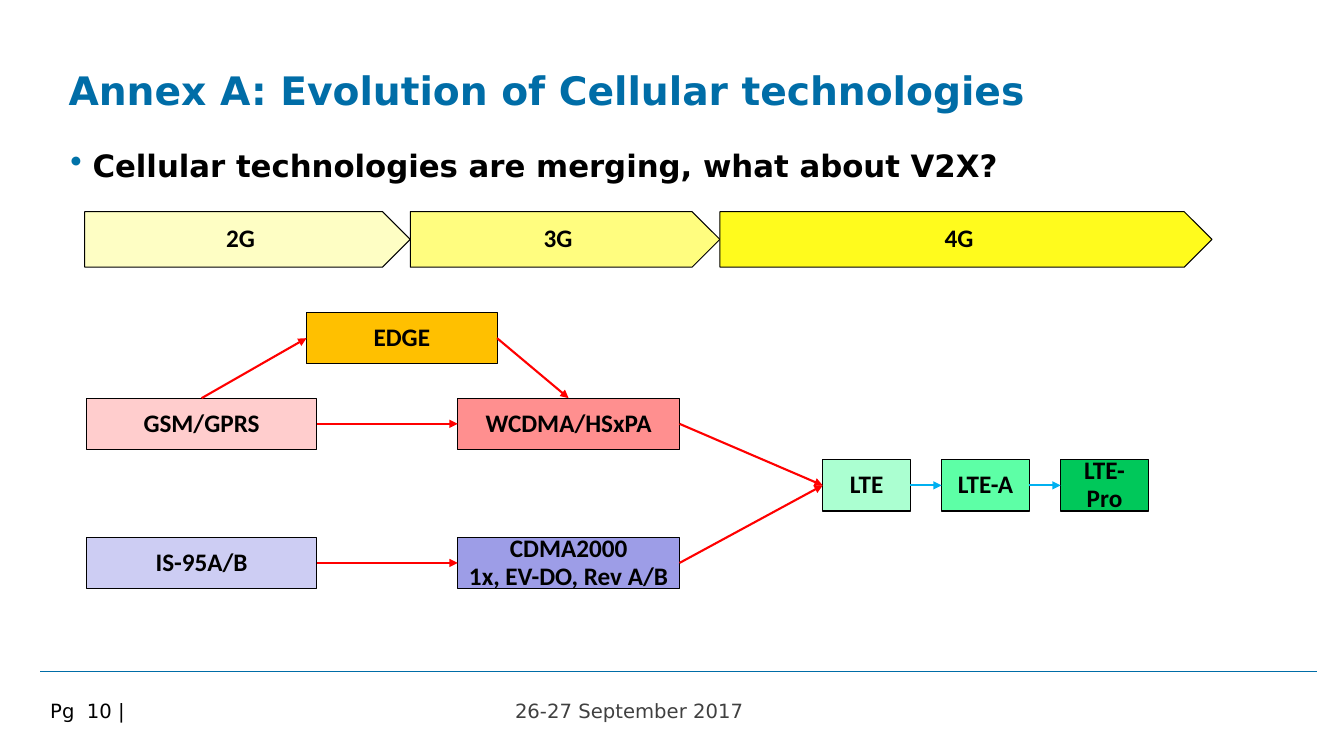
from lxml import etree
from pptx import Presentation
from pptx.dml.color import RGBColor
from pptx.enum.shapes import MSO_CONNECTOR, MSO_SHAPE
from pptx.enum.text import MSO_ANCHOR, PP_ALIGN
from pptx.oxml.ns import qn
from pptx.util import Inches, Pt

COLORS = {
    "title": "006DA7", "bullet": "0072A8", "black": "000000", "date": "404040",
    "red": "FF0000", "blue": "00B0F0",
    "2G": "FEFEC4", "3G": "FFFD7F", "4G": "FFFB1D",
    "EDGE": "FFC000", "GSM/GPRS": "FFCDCD", "WCDMA/HSxPA": "FF8F8F",
    "IS-95A/B": "CDCDF3", "CDMA2000\n1x, EV-DO, Rev A/B": "9D9DE7",
    "LTE": "ABFFD1", "LTE-A": "5DFFA6", "LTE-Pro": "00C85A",
}
CDMA = "CDMA2000\n1x, EV-DO, Rev A/B"

prs = Presentation()
prs.slide_width, prs.slide_height = Inches(13.33), Inches(7.5)
s = prs.slides.add_slide(prs.slide_layouts[5])


def write(sp, text, size, color, font="DejaVu Sans", bold=False, spacing=1.0,
          align=PP_ALIGN.LEFT, anchor=MSO_ANCHOR.TOP, insets=(0.1, 0.05, 0.1, 0.05)):
    tf = sp.text_frame
    tf.text = text
    tf.word_wrap = True
    tf.vertical_anchor = anchor
    tf.margin_left, tf.margin_top, tf.margin_right, tf.margin_bottom = map(Inches, insets)
    for p in tf.paragraphs:
        p.alignment, p.line_spacing = align, spacing
        for r in p.runs:
            r.font.name, r.font.size, r.font.bold = font, Pt(size), bold
            r.font.color.rgb = RGBColor.from_string(COLORS[color])


def add_line(x1, y1, x2, y2, color, width):
    line = s.shapes.add_connector(MSO_CONNECTOR.STRAIGHT, *map(Inches, (x1, y1, x2, y2)))
    line.line.color.rgb = RGBColor.from_string(COLORS[color])
    line.line.width = Pt(width)
    etree.SubElement(line._element.spPr, qn("a:effectLst"))
    return line


# Title, statement and footer
title = s.shapes.title
title.left, title.top, title.width, title.height = map(Inches, (0.68, 0.68, 11.98, 0.71))
write(title, "Annex A: Evolution of Cellular technologies", 28, "title", bold=True,
      spacing=0.94, insets=(0, 0.02, 0, 0))

statement = s.shapes.add_textbox(*map(Inches, (0.6, 1.39, 12.06, 0.49)))
write(statement, "Cellular technologies are merging, what about V2X?", 22, "black",
      bold=True, spacing=1.04)
pPr = statement.text_frame.paragraphs[0]._p.get_or_add_pPr()
pPr.set("marL", str(Inches(0.22)))
pPr.set("indent", str(-Inches(0.22)))
bullet_color = etree.SubElement(pPr, qn("a:buClr"))
etree.SubElement(bullet_color, qn("a:srgbClr"), val=COLORS["bullet"])
etree.SubElement(pPr, qn("a:buSzPct"), val="110000")
etree.SubElement(pPr, qn("a:buChar"), char="•")

add_line(0.4, 6.66, 13.06, 6.66, "title", 0.75)
date = s.shapes.add_textbox(*map(Inches, (5.01, 6.88, 3.86, 0.34)))
write(date, "26-27 September 2017", 14, "date")
page = s.shapes.add_textbox(*map(Inches, (0.4, 6.91, 2.76, 0.39)))
write(page, "Pg  10 |", 14, "black", spacing=0.93)

# Generations along the top, technologies below
ARROW, BOX = MSO_SHAPE.PENTAGON, MSO_SHAPE.RECTANGLE
BOX_H = 0.51
blocks = [
    ("2G", ARROW, 0.84, 2.1, 3.23, 0.55),
    ("3G", ARROW, 4.07, 2.1, 3.07, 0.55),
    ("4G", ARROW, 7.14, 2.1, 4.88, 0.55),
    ("EDGE", BOX, 3.04, 3.1, 1.89, BOX_H),
    ("GSM/GPRS", BOX, 0.86, 3.95, 2.28, BOX_H),
    ("WCDMA/HSxPA", BOX, 4.54, 3.95, 2.2, BOX_H),
    ("IS-95A/B", BOX, 0.86, 5.33, 2.28, BOX_H),
    (CDMA, BOX, 4.54, 5.33, 2.2, BOX_H),
]
blocks += [(name, BOX, 8.16 + 1.18 * i, 4.56, 0.87, BOX_H)
           for i, name in enumerate(("LTE", "LTE-A", "LTE-Pro"))]

shapes = {}
for name, kind, *place in blocks:
    sp = s.shapes.add_shape(kind, *map(Inches, place))
    sp.shadow.inherit = False
    sp.fill.solid()
    sp.fill.fore_color.rgb = RGBColor.from_string(COLORS[name])
    sp.line.color.rgb = RGBColor.from_string(COLORS["black"])
    sp.line.width = Pt(0.75)
    if kind == ARROW:
        sp.adjustments[0] = 0.5
    write(sp, name, 18, "black", font="Calibri", bold=True, spacing=0.93,
          align=PP_ALIGN.CENTER, anchor=MSO_ANCHOR.MIDDLE)
    shapes[name] = sp

# Evolution paths, glued to the connection sites of the boxes
TOP, LEFT, RIGHT = 0, 1, 3
paths = [
    ("GSM/GPRS", TOP, "EDGE", LEFT, "red"),
    ("EDGE", RIGHT, "WCDMA/HSxPA", TOP, "red"),
    ("GSM/GPRS", RIGHT, "WCDMA/HSxPA", LEFT, "red"),
    ("IS-95A/B", RIGHT, CDMA, LEFT, "red"),
    ("WCDMA/HSxPA", RIGHT, "LTE", LEFT, "red"),
    (CDMA, RIGHT, "LTE", LEFT, "red"),
    ("LTE", RIGHT, "LTE-A", LEFT, "blue"),
    ("LTE-A", RIGHT, "LTE-Pro", LEFT, "blue"),
]
for start, start_site, end, end_site, color in paths:
    path = add_line(0, 0, 1, 1, color, 1.5)
    path.begin_connect(shapes[start], start_site)
    path.end_connect(shapes[end], end_site)
    etree.SubElement(path.line._get_or_add_ln(), qn("a:tailEnd"), type="triangle")

prs.save("out.pptx")
